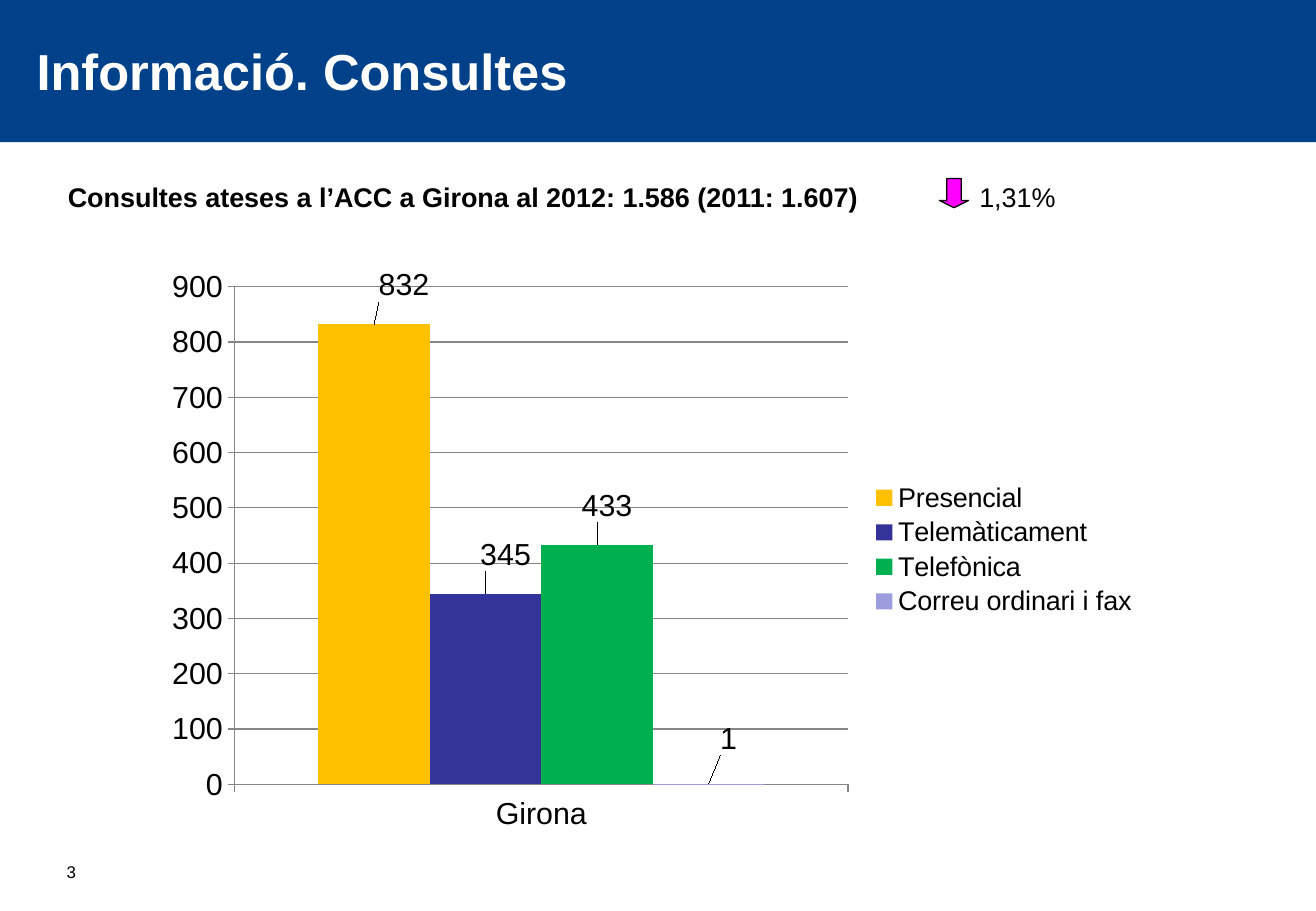
from dataclasses import dataclass

from lxml import etree
from pptx import Presentation
from pptx.chart.data import CategoryChartData
from pptx.dml.color import RGBColor as RGB
from pptx.enum.chart import XL_CHART_TYPE as CT, XL_LABEL_POSITION as LabelPos
from pptx.enum.chart import XL_LEGEND_POSITION as LegendPos, XL_TICK_MARK as Tick
from pptx.enum.shapes import MSO_SHAPE as Shape
from pptx.enum.text import MSO_ANCHOR as Anchor, PP_ALIGN as Align
from pptx.oxml.ns import qn
from pptx.util import Inches, Pt


@dataclass(frozen=True)
class Theme:
    font: str = "Arial"
    black: RGB = RGB(0, 0, 0)
    white: RGB = RGB(255, 255, 255)
    band: RGB = RGB.from_string("004189")
    arrow: RGB = RGB.from_string("FF00FF")
    rule: RGB = RGB.from_string("868686")
    title: Pt = Pt(30)
    chart: Pt = Pt(18)
    body: Pt = Pt(16)
    small: Pt = Pt(10)


theme = Theme()
prs = Presentation()
prs.slide_width, prs.slide_height = Inches(10.83), Inches(7.5)
s = prs.slides.add_slide(prs.slide_layouts[5])


def area(x, y, w, h):
    """Turn percentages of the slide into left, top, width, height."""
    sides = (prs.slide_width, prs.slide_height) * 2
    return [round(side * share / 100) for side, share in zip(sides, (x, y, w, h))]


def write(sp, text, size, color, bold=False, anchor=Anchor.TOP, wrap=True):
    tf = sp.text_frame
    tf.text = text
    tf.word_wrap, tf.vertical_anchor = wrap, anchor
    p = tf.paragraphs[0]
    p.alignment = Align.LEFT
    f = p.runs[0].font
    f.name, f.size, f.bold, f.color.rgb = theme.font, size, bold, color


# Title band, behind the title
band = s.shapes.add_shape(Shape.RECTANGLE, *area(0, 0, 100, 15.6))
band.shadow.inherit = False
band.fill.solid()
band.fill.fore_color.rgb = theme.band
band.line.fill.background()
s.shapes._spTree.insert(2, band._element)

title = s.shapes.title
title.left, title.top, title.width, title.height = area(1.85, 1.07, 64.17, 13.2)
write(title, "Informació. Consultes", theme.title, theme.white, True, Anchor.MIDDLE)

# Heading, change on last year and page number
for place, text, size, bold, anchor, wrap in [
    ((4.25, 19.2, 64.73, 4.93),
     "Consultes ateses a l’ACC a Girona al 2012: 1.586 (2011: 1.607)",
     theme.body, True, Anchor.TOP, True),
    ((73.5, 19.2, 7.76, 4.93), "1,31%", theme.body, False, Anchor.TOP, False),
    ((4.16, 94.13, 10.43, 3.2), "3", theme.small, False, Anchor.MIDDLE, True),
]:
    write(s.shapes.add_textbox(*area(*place)), text, size, theme.black, bold, anchor, wrap)

arrow = s.shapes.add_shape(Shape.UP_ARROW, *area(71.38, 19.6, 2.22, 3.2))
arrow.rotation = 180
arrow.adjustments[0], arrow.adjustments[1] = 0.5, 0.25
arrow.shadow.inherit = False
arrow.fill.solid()
arrow.fill.fore_color.rgb = theme.arrow
arrow.line.color.rgb, arrow.line.width = theme.black, Pt(0.75)

# Column chart: name, value, colour, label shift as shares of the chart
channels = [
    ("Presencial", 832, "FFC000", (0.03, -0.03)),
    ("Telemàticament", 345, "333399", (0.02, -0.03)),
    ("Telefònica", 433, "00B050", (0.01, -0.03)),
    ("Correu ordinari i fax", 1, "9C9CDF", (0.02, -0.04)),
]
data = CategoryChartData()
data.categories = ["Girona"]
for name, value, *_ in channels:
    data.add_series(name, [value])
chart = s.shapes.add_chart(CT.COLUMN_CLUSTERED, *area(11.54, 28.27, 75.9, 64.13), data).chart
chart.has_title = False
chart.font.name, chart.font.size = theme.font, theme.chart
chart.font.color.rgb = theme.black

chart.has_legend = True
legend = chart.legend
legend.position, legend.include_in_layout = LegendPos.RIGHT, False
legend.font.name, legend.font.size = theme.font, theme.body
legend.font.color.rgb = theme.black

values = chart.value_axis
values.minimum_scale, values.maximum_scale, values.major_unit = 0, 900, 100
values.has_major_gridlines = True
for axis in (values, chart.category_axis):
    axis.major_tick_mark, axis.minor_tick_mark = Tick.OUTSIDE, Tick.NONE
    axis.format.line.color.rgb = theme.rule
values.major_gridlines.format.line.color.rgb = theme.rule

# Manual layouts for the plot area and the value labels
plot = chart.plots[0]
plot.gap_width, plot.overlap, plot.vary_by_categories = 150, 0, False
plot_area = chart._chartSpace.find(".//" + qn("c:plotArea"))
for old in plot_area.findall(qn("c:layout")):
    plot_area.remove(old)
layouts = [(plot_area, 0, dict(layoutTarget="inner", xMode="edge", yMode="edge",
                               x=0.083, y=0.05, w=0.614, h=0.852))]
for series, (_, _, color, (dx, dy)) in zip(plot.series, channels):
    series.format.fill.solid()
    series.format.fill.fore_color.rgb = RGB.from_string(color)
    series.invert_if_negative = False
    series.data_labels.show_value = True
    series.points[0].data_label.position = LabelPos.OUTSIDE_END
    label = series._element.find(".//" + qn("c:dLbl"))
    layouts.append((label, 1, dict(x=dx, y=dy)))
for parent, index, settings in layouts:
    layout = etree.Element(qn("c:layout"))
    manual = etree.SubElement(layout, qn("c:manualLayout"))
    for key, val in settings.items():
        etree.SubElement(manual, qn("c:" + key)).set("val", str(val))
    parent.insert(index, layout)

prs.save("out.pptx")
